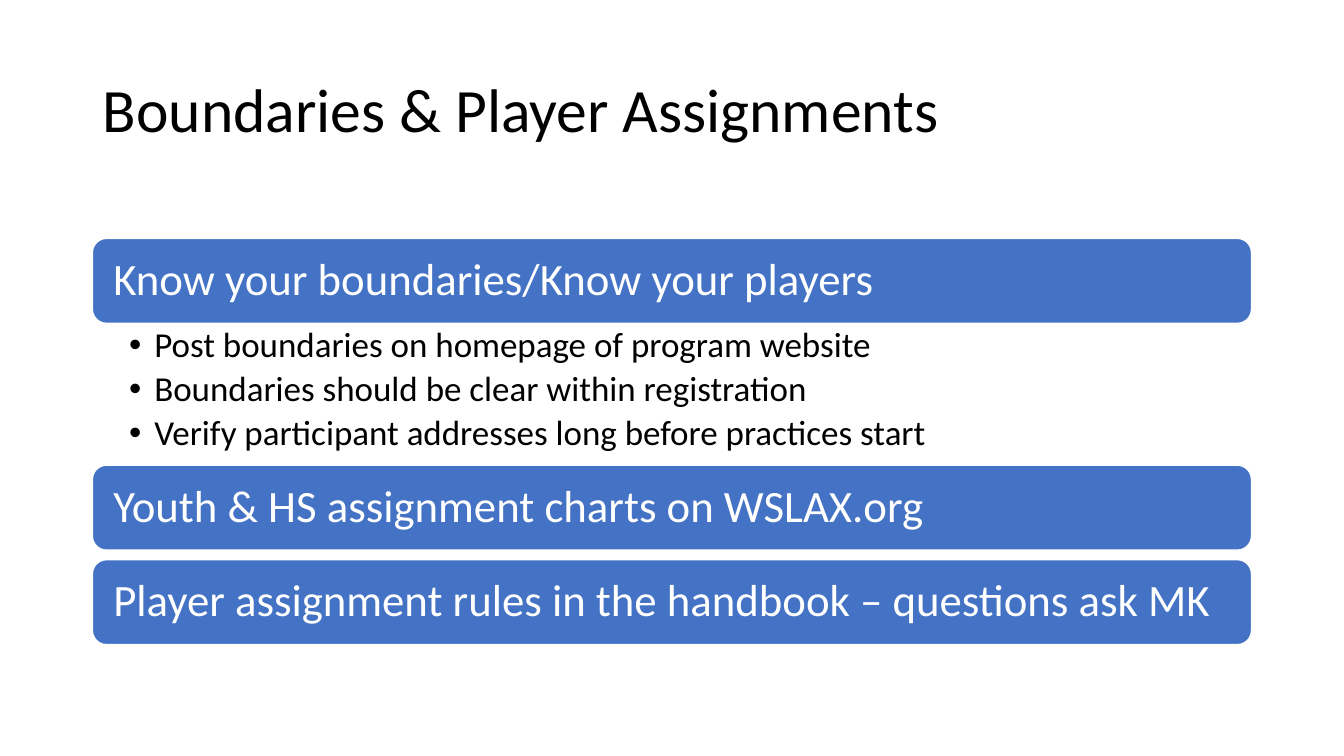
from pptx import Presentation
from pptx.dml.color import RGBColor
from pptx.enum.shapes import MSO_SHAPE as SHAPE
from pptx.enum.text import MSO_ANCHOR as ANCHOR, PP_ALIGN as ALIGN
from pptx.oxml.ns import qn
from pptx.util import Pt
from lxml.etree import SubElement

BLUE, WHITE, BLACK = "4472C4", "FFFFFF", "000000"
LEFT, WIDTH, BAR_HEIGHT = 88, 1104, 81


def px(n):
    return n * 9525


def rgb(value):
    return RGBColor.from_string(value)


def write(tf, lines, size=32, color=BLACK, anchor=ANCHOR.MIDDLE,
          insets=(10, 5, 10, 5), after=0, bullet=None, hang=24):
    tf.word_wrap = True
    tf.vertical_anchor = anchor
    tf.margin_left, tf.margin_top, tf.margin_right, tf.margin_bottom = map(px, insets)
    for i, line in enumerate(lines):
        p = tf.add_paragraph() if i else tf.paragraphs[0]
        if bullet:
            pPr = p._p.get_or_add_pPr()
            pPr.set("marL", str(px(hang)))
            pPr.set("indent", str(-px(hang)))
            SubElement(pPr, qn("a:buFont")).set("typeface", "Arial")
            SubElement(pPr, qn("a:buChar")).set("char", bullet)
        p.alignment = ALIGN.LEFT
        p.line_spacing = 0.9
        p.space_before, p.space_after = Pt(0), Pt(after)
        r = p.add_run()
        r.text = line
        r.font.name, r.font.size = "Calibri", Pt(size)
        r.font.color.rgb = rgb(color)


class Deck:
    """Holds the presentation, its current slide and its style."""

    def __init__(self):
        self.prs = Presentation()
        self.prs.slide_width, self.prs.slide_height = px(1280), px(720)
        self.s = self.prs.slides.add_slide(self.prs.slide_layouts[6])

    def text(self, top, height, lines, **style):
        sp = self.s.shapes.add_textbox(px(LEFT), px(top), px(WIDTH), px(height))
        write(sp.text_frame, lines, **style)

    def bar(self, top, label):
        sp = self.s.shapes.add_shape(SHAPE.ROUNDED_RECTANGLE, px(LEFT), px(top),
                                     px(WIDTH), px(BAR_HEIGHT))
        sp.shadow.inherit = False
        sp.fill.solid()
        sp.fill.fore_color.rgb = rgb(BLUE)
        sp.line.color.rgb = rgb(WHITE)
        sp.line.width = Pt(1)
        write(sp.text_frame, [label], color=WHITE, insets=(16, 12, 12, 12))


def main():
    deck = Deck()
    deck.text(38, 139, ["Boundaries & Player Assignments"], size=44)
    deck.bar(227, "Know your boundaries/Know your players")
    deck.text(308, 135, [
        "Post boundaries on homepage of program website",
        "Boundaries should be clear within registration",
        "Verify participant addresses long before practices start",
    ], size=25, anchor=ANCHOR.TOP, insets=(35, 4, 24, 4), after=4.5, bullet="•")
    deck.bar(443, "Youth & HS assignment charts on WSLAX.org")
    deck.bar(533, "Player assignment rules in the handbook – questions ask MK")
    deck.prs.save("out.pptx")


if __name__ == "__main__":
    main()
